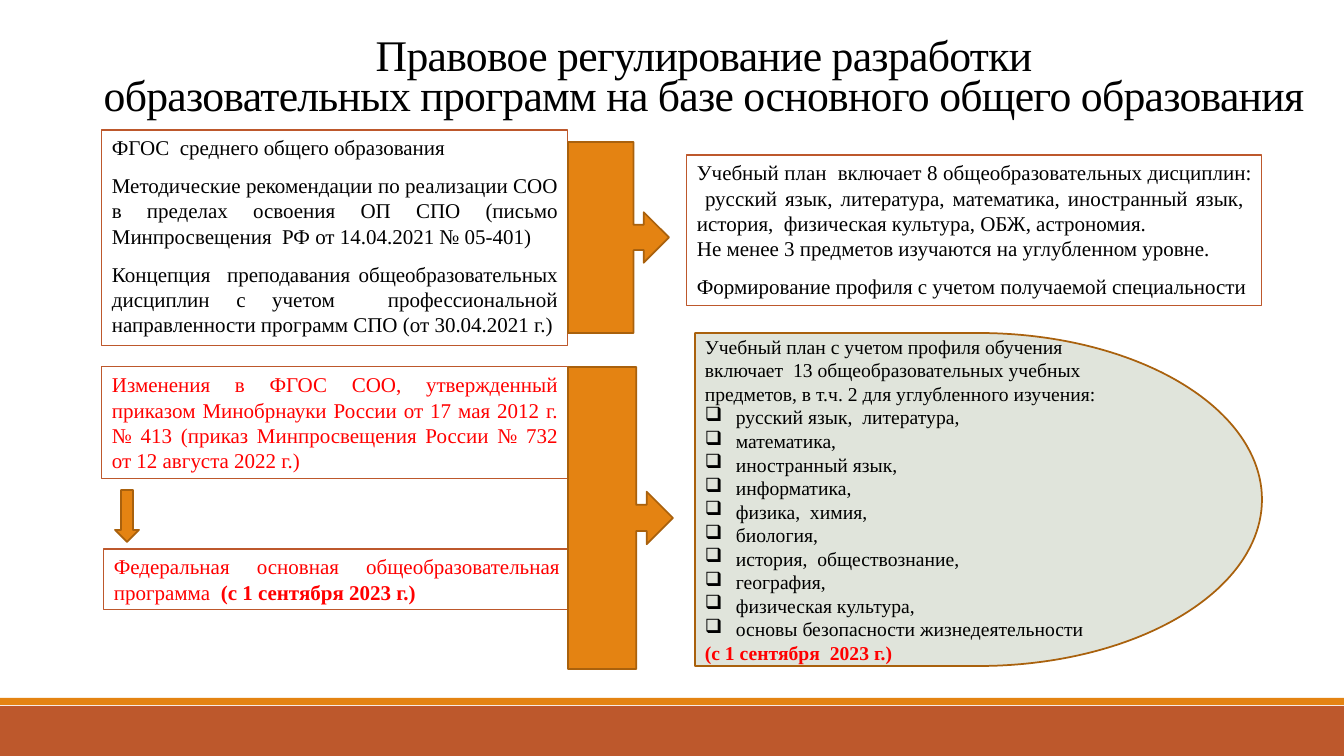
import pptx
import pptx.util
import pptx.dml.color
import pptx.enum.shapes
import pptx.enum.text
from lxml import etree

SHAPE = pptx.enum.shapes.MSO_SHAPE
ALIGN = pptx.enum.text.PP_ALIGN
ANCHOR = pptx.enum.text.MSO_ANCHOR

# Content: a paragraph is a list of (text, style) spans
TITLE = "Правовое регулирование разработки\vобразовательных программ на базе основного общего образования"
CURRENT_RULES = [
    [("ФГОС  среднего общего образования", "plain")],
    [("Методические рекомендации по реализации СОО в пределах освоения ОП СПО "
      "(письмо Минпросвещения  РФ от 14.04.2021 № 05-401)", "plain")],
    [("Концепция  преподавания общеобразовательных дисциплин с учетом  профессиональной "
      "направленности программ СПО (от 30.04.2021 г.)", "plain")],
]
CURRENT_PLAN = [
    [("Учебный план  включает 8 общеобразовательных дисциплин:  русский язык, литература, "
      "математика, иностранный язык,  история,  физическая культура, ОБЖ, астрономия.", "plain")],
    [("Не менее 3 предметов изучаются на углубленном уровне.", "plain")],
    [("Формирование профиля с учетом получаемой специальности", "plain")],
]
AMENDMENTS = [
    [("Изменения в ФГОС СОО, утвержденный приказом Минобрнауки России от 17 мая 2012 г. № 413 "
      "(приказ Минпросвещения России № 732 от 12 августа 2022 г.)", "red")],
]
FEDERAL_PROGRAM = [
    [("Федеральная основная общеобразовательная программа  ", "red"),
     ("(с 1 сентября 2023 г.)", "red bold")],
]
NEW_PLAN_INTRO = [
    "Учебный план с учетом профиля обучения",
    "включает  13 общеобразовательных учебных предметов, в т.ч. 2 для углубленного изучения:",
]
SUBJECTS = [
    "русский язык,  литература,", "математика,", "иностранный язык,", "информатика,",
    "физика,  химия,", "биология,", "история,  обществознание,", "география,",
    "физическая культура,", "основы безопасности жизнедеятельности",
]
START_DATE = "(с 1 сентября  2023 г.)"

THEME = {
    "font": "Times New Roman",
    "black": "000000", "red": "FF0000", "rust": "BD582C",
    "orange": "E48312", "brown": "A9610D", "sage": "E0E4DB",
    "title size": 31.2, "box size": 15, "plan size": 14,
    "thin": 0.75, "thick": 1.25,
}

# Layout in px: left, top, width, height
PAGE_WIDTH, PAGE_HEIGHT = 1344, 756
FOOTER_HEIGHT, STRIPE_HEIGHT = 50, 7
FOOTER_TOP = PAGE_HEIGHT - FOOTER_HEIGHT
TITLE_AREA = (78, 29, 1252, 95)
# area, paragraphs, indexes of paragraphs with a gap above
FRAMES = [
    ((102, 367, 466, 112), AMENDMENTS, ()),
    ((104, 549, 466, 61), FEDERAL_PROGRAM, ()),
    ((102, 130, 466, 216), CURRENT_RULES, (1, 2)),
    ((687, 155, 575, 151), CURRENT_PLAN, (2,)),
]
ARROWS = [
    (SHAPE.RIGHT_ARROW_CALLOUT, (568, 367, 105, 302)),
    (SHAPE.RIGHT_ARROW_CALLOUT, (568, 142, 101, 191)),
    (SHAPE.DOWN_ARROW, (115, 490, 24, 52)),
]
NEW_PLAN_AREA = (695, 333, 567, 333)
BULLET_INDENT = 31
PARAGRAPH_GAP = 9


def px(length):
    return pptx.util.Emu(round(length * 914400 / 100.8))


def color(name):
    return pptx.dml.color.RGBColor.from_string(THEME[name])


def add_shape(kind, area, fill=None, line=None, weight="thin"):
    shape = page.shapes.add_shape(kind, *map(px, area))
    shape.shadow.inherit = False
    if fill:
        shape.fill.solid()
        shape.fill.fore_color.rgb = color(fill)
    else:
        shape.fill.background()
    if line:
        shape.line.color.rgb = color(line)
        shape.line.width = pptx.util.Pt(THEME[weight])
    else:
        shape.line.fill.background()
    return shape


def format_span(span, size, style="plain"):
    span.font.name = THEME["font"]
    span.font.size = pptx.util.Pt(THEME[size])
    span.font.bold = "bold" in style
    span.font.color.rgb = color("red" if "red" in style else "black")


def write(box, paragraphs, size, align, anchor):
    frame = box.text_frame
    frame.word_wrap = True
    frame.vertical_anchor = anchor
    frame.text = "\n" * (len(paragraphs) - 1)
    for para, spans in zip(frame.paragraphs, paragraphs):
        para.alignment = align
        for text, style in spans:
            span = para.add_run()
            span.text = text
            format_span(span, size, style)
    return frame.paragraphs


def add_bullet(para):
    properties = para._p.get_or_add_pPr()
    properties.set("marL", str(px(BULLET_INDENT)))
    properties.set("indent", str(-px(BULLET_INDENT)))
    bullet = etree.SubElement(properties, pptx.oxml.ns.qn("a:buChar"))
    bullet.set("char", "❑")


deck = pptx.Presentation()
deck.slide_width, deck.slide_height = px(PAGE_WIDTH), px(PAGE_HEIGHT)
page = deck.slides.add_slide(deck.slide_layouts[6])

# Footer bands
add_shape(SHAPE.RECTANGLE, (0, FOOTER_TOP, PAGE_WIDTH, FOOTER_HEIGHT), "rust")
add_shape(SHAPE.RECTANGLE, (0, FOOTER_TOP - STRIPE_HEIGHT - 1, PAGE_WIDTH, STRIPE_HEIGHT), "orange")

# Title
title = page.shapes.add_textbox(*map(px, TITLE_AREA))
title.text_frame.word_wrap = True
title.text_frame.vertical_anchor = ANCHOR.BOTTOM
title_para = title.text_frame.paragraphs[0]
title_para.text = TITLE
title_para.alignment = ALIGN.CENTER
title_para.line_spacing = 0.75
for title_span in title_para.runs:
    format_span(title_span, "title size")
    title_span.font._element.set("spc", "-50")

# Framed texts
for area, paragraphs, gaps in FRAMES:
    box = add_shape(SHAPE.RECTANGLE, area, line="rust")
    written = write(box, paragraphs, "box size", ALIGN.JUSTIFY, ANCHOR.TOP)
    for index in gaps:
        written[index].space_before = pptx.util.Pt(PARAGRAPH_GAP)

# Arrows
for kind, area in ARROWS:
    add_shape(kind, area, "orange", "brown", "thick")

# New curriculum with its list of subjects
plan = add_shape(SHAPE.FLOWCHART_DELAY, NEW_PLAN_AREA, "sage", "brown", "thick")
plan_paragraphs = [[(text, "plain")] for text in NEW_PLAN_INTRO + SUBJECTS]
plan_paragraphs.append([(START_DATE, "red bold")])
written = write(plan, plan_paragraphs, "plan size", ALIGN.LEFT, ANCHOR.MIDDLE)
first_subject = len(NEW_PLAN_INTRO)
for para in written[first_subject:first_subject + len(SUBJECTS)]:
    add_bullet(para)

deck.save("out.pptx")
